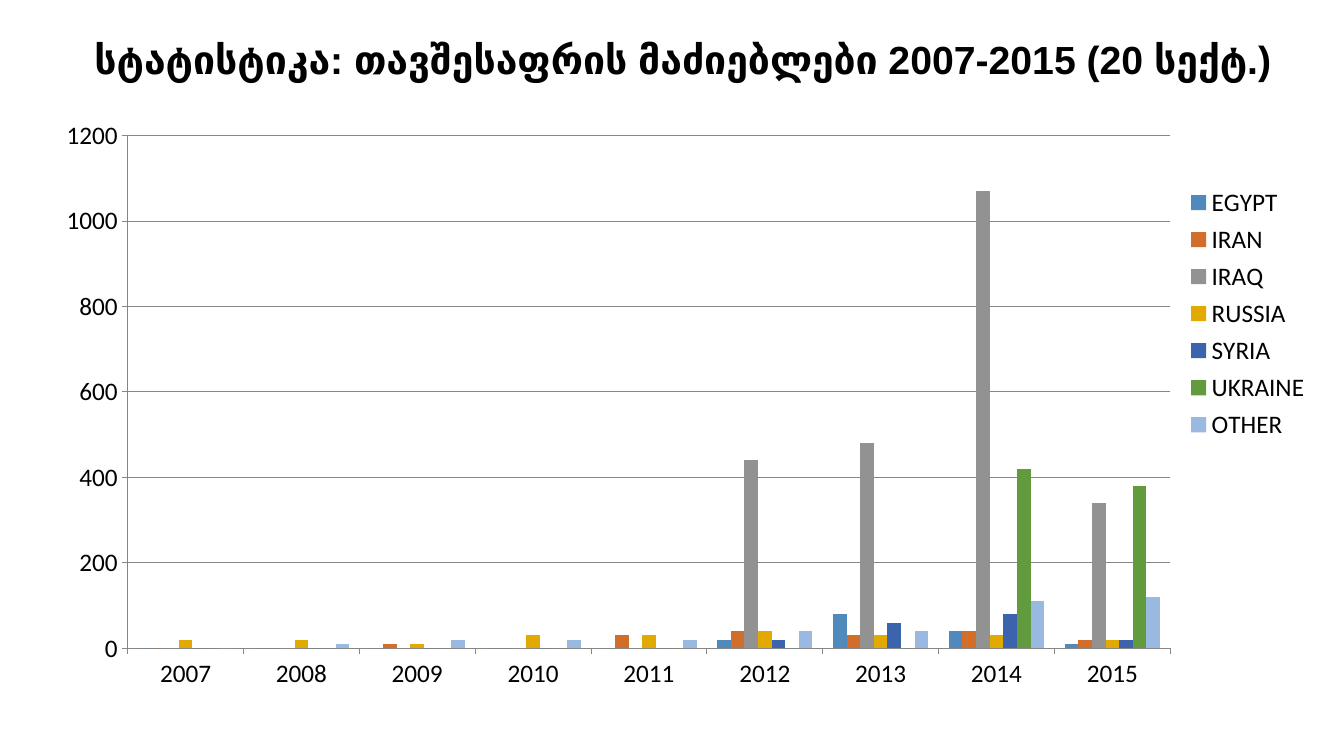
from lxml.etree import SubElement
from pptx import Presentation
from pptx.chart.data import CategoryChartData
from pptx.dml.color import RGBColor
from pptx.enum.chart import XL_CHART_TYPE, XL_LEGEND_POSITION, XL_TICK_MARK
from pptx.enum.text import MSO_ANCHOR, PP_ALIGN
from pptx.oxml.ns import qn
from pptx.util import Inches, Pt

HEADING = "სტატისტიკა: თავშესაფრის მაძიებლები 2007-2015 (20 სექტ.)"
YEARS = [str(year) for year in range(2007, 2016)]
SEEKERS = {
    "EGYPT": (0, 0, 0, 0, 0, 20, 80, 40, 10),
    "IRAN": (0, 0, 10, 0, 30, 40, 30, 40, 20),
    "IRAQ": (0, 0, 0, 0, 0, 440, 480, 1070, 340),
    "RUSSIA": (20, 20, 10, 30, 30, 40, 30, 30, 20),
    "SYRIA": (0, 0, 0, 0, 0, 20, 60, 80, 20),
    "UKRAINE": (0, 0, 0, 0, 0, 0, 0, 420, 380),
    "OTHER": (0, 10, 20, 20, 20, 40, 40, 110, 120),
}
COLOURS = {
    "EGYPT": "5089BC", "IRAN": "D26E2A", "IRAQ": "929292", "RUSSIA": "E2AA00",
    "SYRIA": "3B64AD", "UKRAINE": "629A3E", "OTHER": "9AB9E0",
    "ink": "000000", "rule": "868686",
}
WIDTH, HEIGHT = Inches(13.33), Inches(7.5)
HEADING_AREA = (0.033, 0.044, 0.95, 0.067)
CHART_AREA = (0.025, 0.156, 0.959, 0.756)
PLOT_AREA = (0.073, 0.031, 0.809, 0.897)
LEGEND_AREA = (0.887, 0.11, 0.11, 0.465)
HEADING_FONT = {"name": "Arial", "size": Pt(28), "bold": True}
CHART_FONT = {"name": "Calibri", "size": Pt(18)}
HEADING_FRAME = {
    "word_wrap": True, "vertical_anchor": MSO_ANCHOR.MIDDLE,
    "margin_left": 0, "margin_right": 0, "margin_top": 0, "margin_bottom": 0,
}


def apply(target, formats):
    for key, value in formats.items():
        setattr(target, key, value)


def ink(font, formats):
    apply(font, formats)
    font.color.rgb = RGBColor.from_string(COLOURS["ink"])


def place(area):
    return [int(share * side) for share, side in zip(area, (WIDTH, HEIGHT) * 2)]


def set_layout(part, area, inner=False):
    layout = part.find(qn("c:layout"))
    if layout is None:
        layout = SubElement(part, qn("c:layout"))
        anchor = part.find(qn("c:legendPos"))
        if anchor is not None:
            anchor.addnext(layout)
        else:
            part.insert(0, layout)
    for child in list(layout):
        layout.remove(child)
    manual = SubElement(layout, qn("c:manualLayout"))
    settings = {"layoutTarget": "inner"} if inner else {}
    settings.update(xMode="edge", yMode="edge")
    settings.update(zip("xywh", area))
    for tag, value in settings.items():
        SubElement(manual, qn(f"c:{tag}")).set("val", str(value))


def rule(line):
    line.color.rgb = RGBColor.from_string(COLOURS["rule"])
    line.width = Pt(0.75)


def add_heading(slide):
    frame = slide.shapes.add_textbox(*place(HEADING_AREA)).text_frame
    apply(frame, HEADING_FRAME)
    paragraph = frame.paragraphs[0]
    paragraph.alignment = PP_ALIGN.CENTER
    run = paragraph.add_run()
    run.text = HEADING
    ink(run.font, HEADING_FONT)


def add_seekers_chart(slide):
    figures = CategoryChartData()
    figures.categories = YEARS
    for country, counts in SEEKERS.items():
        figures.add_series(country, counts)
    chart = slide.shapes.add_chart(
        XL_CHART_TYPE.COLUMN_CLUSTERED, *place(CHART_AREA), figures
    ).chart
    ink(chart.font, CHART_FONT)
    apply(chart, {"has_title": False, "has_legend": True})
    apply(chart.legend, {"position": XL_LEGEND_POSITION.RIGHT, "include_in_layout": False})

    columns = chart.plots[0]
    apply(columns, {"gap_width": 150, "overlap": 0, "vary_by_categories": False})
    for series in columns.series:
        series.invert_if_negative = False
        series.format.fill.solid()
        series.format.fill.fore_color.rgb = RGBColor.from_string(COLOURS[series.name])

    for axis in (chart.category_axis, chart.value_axis):
        apply(axis, {"major_tick_mark": XL_TICK_MARK.OUTSIDE, "minor_tick_mark": XL_TICK_MARK.NONE})
        rule(axis.format.line)
    apply(chart.value_axis, {"minimum_scale": 0, "maximum_scale": 1200, "major_unit": 200})
    rule(chart.value_axis.major_gridlines.format.line)

    chart_root = chart.element
    set_layout(chart_root.find(".//" + qn("c:plotArea")), PLOT_AREA, inner=True)
    set_layout(chart_root.find(".//" + qn("c:legend")), LEGEND_AREA)


def main():
    deck = Presentation()
    apply(deck, {"slide_width": WIDTH, "slide_height": HEIGHT})
    slide = deck.slides.add_slide(deck.slide_layouts[6])
    add_heading(slide)
    add_seekers_chart(slide)
    deck.save("out.pptx")


if __name__ == "__main__":
    main()
